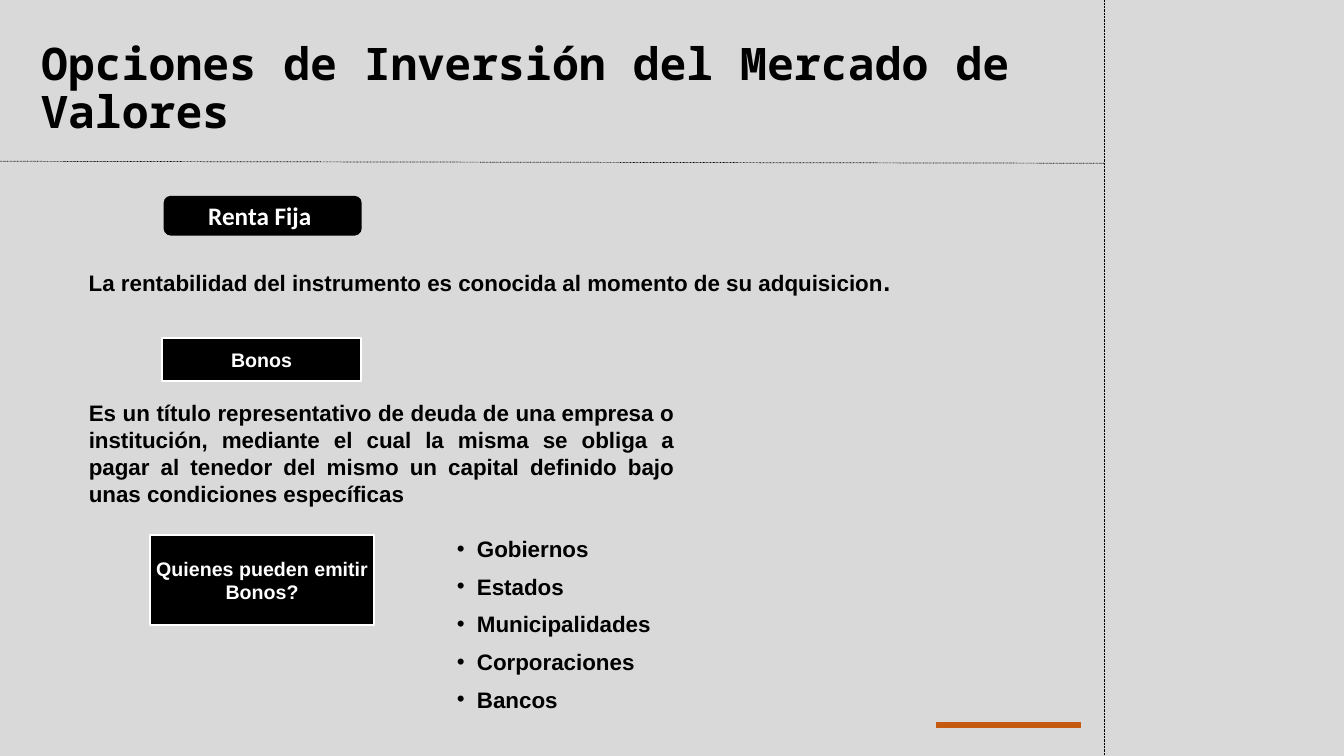
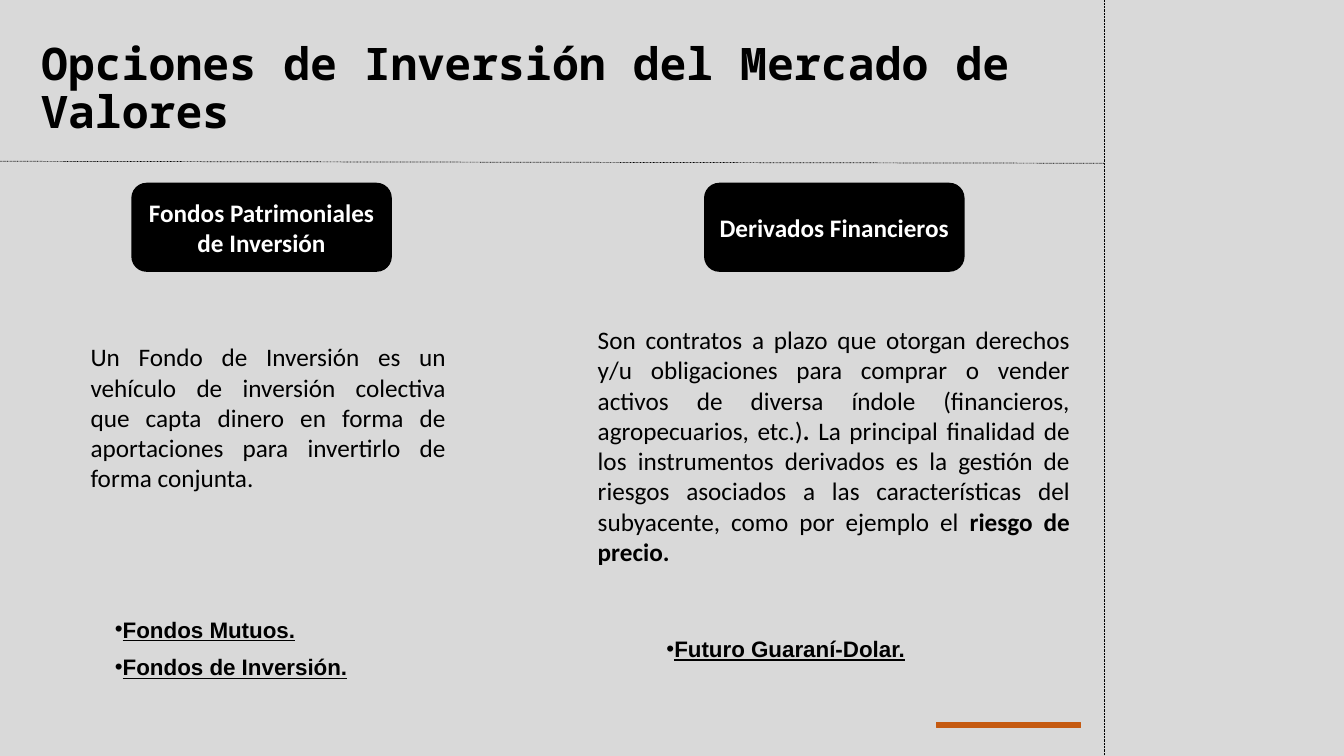
from lxml.etree import SubElement
from pptx import Presentation
from pptx.dml.color import RGBColor
from pptx.enum.dml import MSO_LINE
from pptx.enum.shapes import MSO_CONNECTOR, MSO_SHAPE
from pptx.enum.text import MSO_ANCHOR, MSO_AUTO_SIZE, PP_ALIGN
from pptx.oxml.ns import qn
from pptx.util import Inches, Pt

BLACK, WHITE, GRAY, ORANGE = "000000", "FFFFFF", "D9D9D9", "C55A11"
TITLE = "Opciones de Inversión del Mercado de Valores"
BODY = {"size": 16, "bold": True, "space_before": 7.7, "inset": 0.04}
PROSE = {"font": "Calibri", "size": 18, "align": PP_ALIGN.JUSTIFY}


def color(value):
    """Turn a hex string into a colour."""
    return RGBColor.from_string(value)


def add_bullet(paragraph, indent):
    """Give a paragraph a round bullet and a hanging indent."""
    properties = paragraph._p.get_or_add_pPr()
    properties.set("marL", str(Inches(indent)))
    properties.set("indent", str(Inches(-0.2)))
    SubElement(properties, qn("a:buFont"), typeface="Arial")
    SubElement(properties, qn("a:buChar"), char="•")


def write_text(shape, paragraphs, font="Arial", size=16, fill=BLACK, bold=False,
               underline=None, align=PP_ALIGN.LEFT, anchor=MSO_ANCHOR.TOP, inset=None,
               space_before=0, line_spacing=None, bullet_indent=None):
    """Write paragraphs, each a string or a list of (text, overrides) runs."""
    frame = shape.text_frame
    frame.word_wrap = True
    frame.vertical_anchor = anchor
    if inset is not None:
        frame.margin_left = frame.margin_right = Inches(inset)
        frame.margin_top = frame.margin_bottom = Inches(inset)
    for index, content in enumerate(paragraphs):
        paragraph = frame.add_paragraph() if index else frame.paragraphs[0]
        paragraph.alignment = align
        paragraph.space_before = Pt(space_before)
        if line_spacing:
            paragraph.line_spacing = line_spacing
        if bullet_indent is not None:
            add_bullet(paragraph, bullet_indent)
        for text, overrides in [(content, {})] if isinstance(content, str) else content:
            run = paragraph.add_run()
            run.text = text
            run.font.name = font
            run.font.size = Pt(overrides.get("size", size))
            run.font.bold = overrides.get("bold", bold)
            run.font.underline = underline
            run.font.color.rgb = color(fill)


def add_text(slide, box, paragraphs, grow=True, **text_format):
    """Add a text box, fitted to its text if it may grow."""
    shape = slide.shapes.add_textbox(*map(Inches, box))
    write_text(shape, paragraphs, **text_format)
    if grow:
        shape.text_frame.auto_size = MSO_AUTO_SIZE.SHAPE_TO_FIT_TEXT


def add_block(slide, kind, box, fill, line, width):
    """Add a filled and outlined shape without shadow."""
    shape = slide.shapes.add_shape(kind, *map(Inches, box))
    shape.shadow.inherit = False
    shape.fill.solid()
    shape.fill.fore_color.rgb = color(fill)
    shape.line.color.rgb = color(line)
    shape.line.width = Pt(width)
    return shape


def add_heading(slide, box, text):
    """Add a black rounded heading."""
    shape = add_block(slide, MSO_SHAPE.ROUNDED_RECTANGLE, box, BLACK, BLACK, 1)
    write_text(shape, [text], font="Calibri", size=18, fill=WHITE, bold=True,
               align=PP_ALIGN.CENTER, anchor=MSO_ANCHOR.MIDDLE)


def add_label(slide, box, text):
    """Add a black rectangular label with a white outline."""
    shape = add_block(slide, MSO_SHAPE.RECTANGLE, box, BLACK, WHITE, 1.5)
    write_text(shape, [text], size=14, fill=WHITE, bold=True, inset=0,
               align=PP_ALIGN.CENTER, anchor=MSO_ANCHOR.MIDDLE)


def add_dotted_line(slide, *ends):
    """Add a thin dotted line between two points."""
    line = slide.shapes.add_connector(MSO_CONNECTOR.STRAIGHT, *map(Inches, ends))
    line.line.color.rgb = color(BLACK)
    line.line.width = Pt(0.5)
    line.line.dash_style = MSO_LINE.ROUND_DOT
    SubElement(line._element.spPr, qn("a:effectLst"))


def add_slide(presentation):
    """Add a slide with the shared background, lines, title and accent bar."""
    slide = presentation.slides.add_slide(presentation.slide_layouts[6])
    slide.background.fill.solid()
    slide.background.fill.fore_color.rgb = color(GRAY)
    add_dotted_line(slide, 10.95, 0, 10.95, 7.5)
    add_dotted_line(slide, 0, 1.6, 10.95, 1.62)
    add_text(slide, (0.31, 0.17, 11.5, 1.45), [TITLE], grow=False, font="Noto Sans Mono",
             size=32, bold=True, anchor=MSO_ANCHOR.MIDDLE, line_spacing=0.9)
    add_block(slide, MSO_SHAPE.RECTANGLE, (9.29, 7.17, 1.43, 0.05), ORANGE, ORANGE, 1)
    return slide


def build_fixed_income(presentation):
    """Build the slide on fixed income and bonds."""
    slide = add_slide(presentation)
    add_heading(slide, (1.63, 1.95, 1.95, 0.38), "Renta Fija ")
    add_text(slide, (0.84, 2.6, 8.13, 0.76), [[
        ("La rentabilidad del instrumento es conocida al momento de su adquisicion", {}),
        (".", {"size": 18})]], **BODY)
    add_label(slide, (1.61, 3.35, 1.97, 0.43), "Bonos")
    add_text(slide, (0.84, 3.92, 5.89, 1.54), [
        "Es un título representativo de deuda de una empresa o institución, mediante el "
        "cual la misma se obliga a pagar al tenedor del mismo un capital definido bajo "
        "unas condiciones específicas"], align=PP_ALIGN.JUSTIFY, **BODY)
    add_label(slide, (1.49, 5.31, 2.22, 0.89), "Quienes pueden emitir Bonos?")
    issuers = ["Gobiernos", "Estados", "Municipalidades", "Corporaciones", "Bancos"]
    add_text(slide, (4.49, 5.27, 2.22, 2.23), issuers, bullet_indent=0.2, **BODY)


def build_funds_and_derivatives(presentation):
    """Build the slide on investment funds and derivatives."""
    slide = add_slide(presentation)
    columns = [
        (1.31, "Fondos Patrimoniales de Inversión", (0.8, 3.34, 3.72, 1.62),
         "Un Fondo de Inversión es un vehículo de inversión colectiva que capta dinero en "
         "forma de aportaciones para invertirlo de forma conjunta.",
         (1.1, 6.07, 2.99, 0.73), ["Fondos Mutuos.", "Fondos de Inversión."]),
        (6.99, "Derivados Financieros", (5.83, 3.17, 4.88, 2.52),
         [("Son contratos a plazo que otorgan derechos y/u obligaciones para comprar o "
           "vender activos de diversa índole (financieros, agropecuarios, etc.)", {}),
          (". ", {"bold": True}),
          ("La principal finalidad de los instrumentos derivados es la gestión de riesgos "
           "asociados a las características del subyacente, como por ejemplo el ", {}),
          ("riesgo de precio.", {"bold": True})],
         (6.57, 6.26, 2.98, 0.35), ["Futuro Guaraní-Dolar."]),
    ]
    for left, heading, prose_box, prose, list_box, examples in columns:
        add_heading(slide, (left, 1.82, 2.57, 0.87), heading)
        add_text(slide, prose_box, [prose], **PROSE)
        add_text(slide, list_box, examples, underline=True, bullet_indent=0, **BODY)


def main():
    """Build and save the presentation."""
    presentation = Presentation()
    presentation.slide_width = Inches(13.33)
    presentation.slide_height = Inches(7.5)
    build_fixed_income(presentation)
    build_funds_and_derivatives(presentation)
    presentation.save("out.pptx")


if __name__ == "__main__":
    main()
